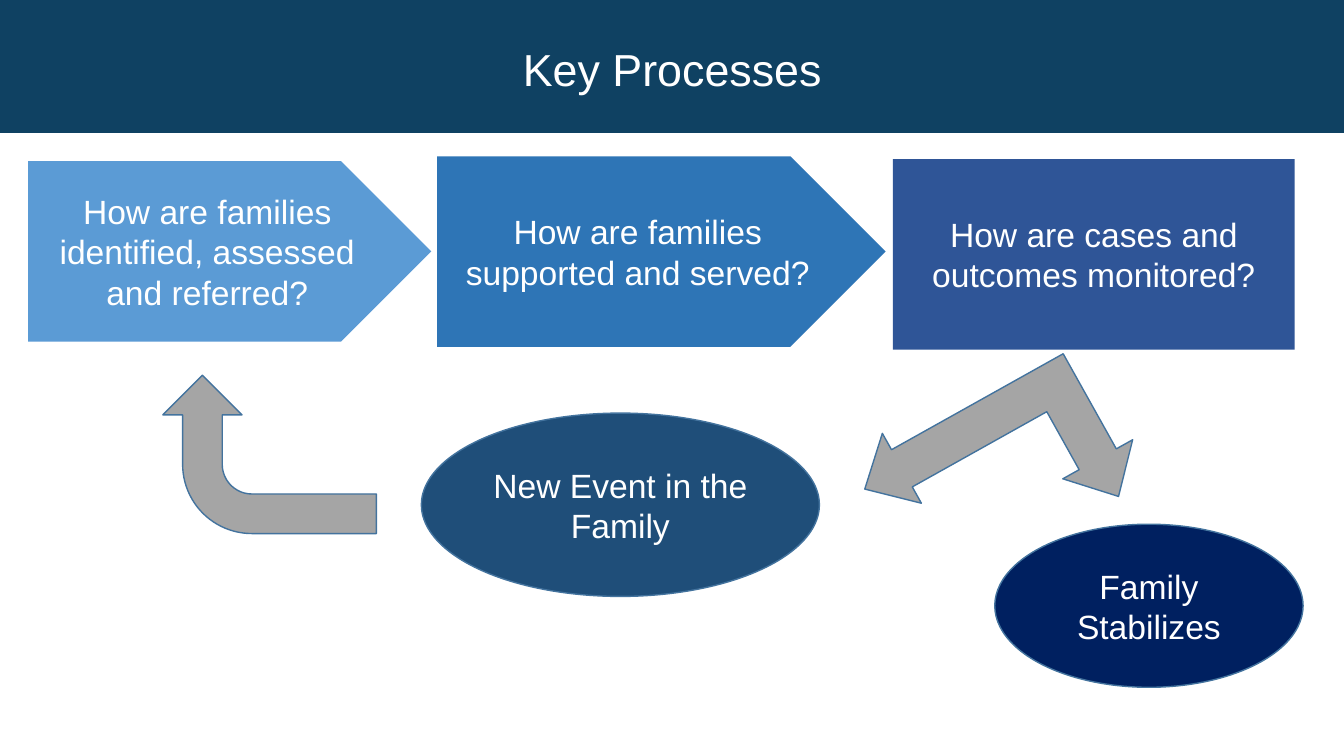
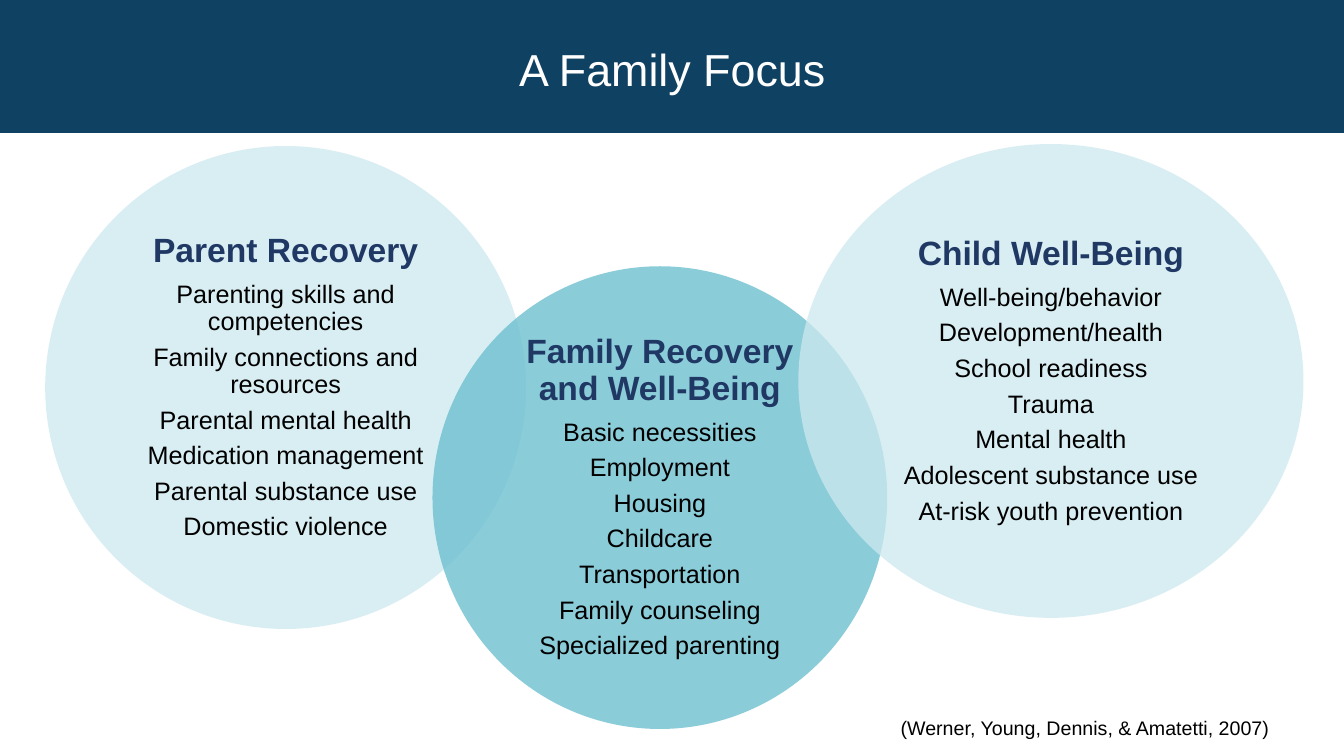
import copy
from lxml import etree
from pptx import Presentation
from pptx import util as u
from pptx.dml import color
from pptx.enum import shapes, text
from pptx.oxml import ns

HUES = {
    "band": "0F4162", "edge": "43739E", "arrow": "A5A5A5",
    "sky": "5B9BD5", "blue": "2E75B6", "indigo": "2F5597",
    "steel": "1F4E79", "navy": "002060", "head": "203864",
    "pale": "CDE9EF", "teal": "65BCCD", "white": "FFFFFF", "black": "000000",
}
FONT = "Arial"
KIND = shapes.MSO_SHAPE

STEPS = [
    (KIND.PENTAGON, (0.71, 4.06, 10.16, 4.55), "sky", None,
     ["How are families identified, assessed and referred?"]),
    (KIND.PENTAGON, (11.02, 3.94, 11.3, 4.8), "blue", None,
     ["How are families supported and served?"]),
    (KIND.RECTANGLE, (22.5, 4.01, 10.13, 4.8), "indigo", None,
     ["How are cases and outcomes monitored?"]),
    (KIND.OVAL, (10.62, 10.41, 10.03, 4.62), "steel", "edge",
     ["New Event in the", "Family"]),
    (KIND.OVAL, (25.07, 13.21, 7.77, 4.11), "navy", "edge",
     ["Family Stabilizes"]),
]
ARROWS = [
    (KIND.BENT_ARROW, (4.8, 8.76, 3.99, 5.38), 270, []),
    (KIND.LEFT_UP_ARROW, (23.04, 8.48, 4.29, 6.5), 240.8, [0.25, 0.235, 0.25]),
]
RINGS = [
    ((1.14, 3.68, 12.12, 12.17), "pale", "Parent Recovery", [
        "Parenting skills and competencies", "Family connections and resources",
        "Parental mental health", "Medication management",
        "Parental substance use", "Domestic violence"]),
    ((10.9, 6.71, 11.46, 11.66), "teal", "Family Recovery and Well-Being", [
        "Basic necessities", "Employment", "Housing", "Childcare",
        "Transportation", "Family counseling", "Specialized parenting"]),
    ((20.12, 3.63, 12.73, 11.94), "pale", "Child Well-Being", [
        "Well-being/behavior", "Development/health", "School readiness",
        "Trauma", "Mental health", "Adolescent substance use",
        "At-risk youth prevention"]),
]
SOURCE = "(Werner, Young, Dennis, & Amatetti, 2007)"


def rgb(hue):
    return color.RGBColor.from_string(HUES[hue])


def place(box):
    return [u.Cm(n) for n in box]


def write(frame, lines, size, hue):
    frame.word_wrap = True
    frame.text = "\n".join(lines)
    for para in frame.paragraphs:
        para.alignment = text.PP_ALIGN.CENTER
        style(para, size, hue)


def style(para, size, hue, bold=False):
    font = para.font
    font.name, font.size, font.bold = FONT, u.Pt(size), bold
    font.color.rgb = rgb(hue)


def draw(slide, kind, box, fill, edge=None):
    shape = slide.shapes.add_shape(kind, *place(box))
    shape.shadow.inherit = False
    shape.fill.solid()
    shape.fill.fore_color.rgb = rgb(fill)
    if edge:
        shape.line.color.rgb = rgb(edge)
        shape.line.width = u.Pt(1)
    else:
        shape.line.fill.background()
    return shape


def fade(shape, share):
    tint = next(shape.element.spPr.iter(ns.qn("a:srgbClr")))
    etree.SubElement(tint, ns.qn("a:alpha"), val=str(share * 1000))


def start(deck, name):
    slide = deck.slides.add_slide(deck.slide_layouts[5])
    title = slide.shapes.title
    title.left, title.top, title.width, title.height = place((1.02, 0.15, 31.85, 3.18))
    frame = title.text_frame
    write(frame, [name], 32, "white")
    frame.vertical_anchor = text.MSO_ANCHOR.MIDDLE
    para = frame.paragraphs[0]
    para.space_before = para.space_after = u.Pt(3)
    band = draw(slide, KIND.RECTANGLE, (0, 0, 33.87, 3.33), "band", "band")
    title.element.addprevious(band.element)
    return slide


def flow(deck):
    slide = start(deck, "Key Processes")
    for kind, box, fill, edge, lines in STEPS:
        frame = draw(slide, kind, box, fill, edge).text_frame
        write(frame, lines, 24, "white")
        frame.vertical_anchor = text.MSO_ANCHOR.MIDDLE
    for kind, box, turn, bends in ARROWS:
        arrow = draw(slide, kind, box, "arrow", "edge")
        arrow.rotation = turn
        for i, bend in enumerate(bends):
            arrow.adjustments[i] = bend


def focus(deck):
    slide = start(deck, "A Family Focus")
    for box, fill, head, items in RINGS:
        ring = draw(slide, KIND.OVAL, box, fill)
        fade(ring, 75)
        frame = ring.text_frame
        write(frame, [head] + items, 18, "black")
        frame.vertical_anchor = text.MSO_ANCHOR.MIDDLE
        frame.margin_left = frame.margin_right = u.Cm(0.25)
        frame.margin_top = frame.margin_bottom = u.Cm(0.25)
        for para in frame.paragraphs:
            para.line_spacing = 0.9
            para.space_after = u.Pt(6)
        first = frame.paragraphs[0]
        style(first, 24, "head", True)
        first.space_after = u.Pt(8.4)
    note = slide.shapes.add_textbox(*place((21.11, 17.91, 12.47, 0.86)))
    write(note.text_frame, [SOURCE], 14, "black")


def main():
    deck = Presentation()
    deck.slide_width, deck.slide_height = u.Cm(33.87), u.Cm(19.05)
    flow(deck)
    focus(deck)
    deck.save("out.pptx")


if __name__ == "__main__":
    main()
